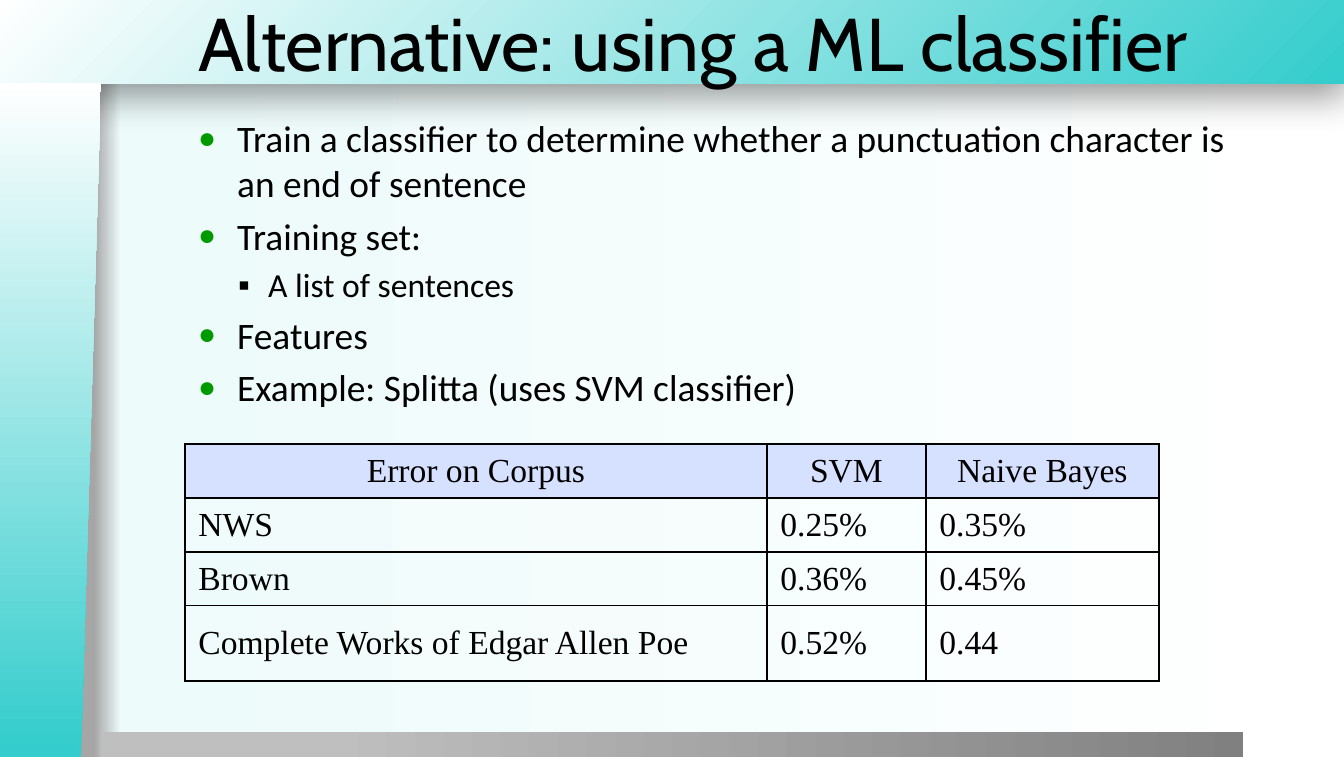
from lxml.etree import SubElement
from pptx import Presentation
from pptx.dml.color import RGBColor
from pptx.enum.shapes import MSO_SHAPE as Shape
from pptx.enum.text import MSO_ANCHOR as Anchor, MSO_AUTO_SIZE as AutoSize, PP_ALIGN as Align
from pptx.oxml.ns import qn
from pptx.util import Emu, Inches, Pt

SCALE = 914400 / 134.4
BLACK = RGBColor(0x00, 0x00, 0x00)
WHITE = RGBColor(0xFF, 0xFF, 0xFF)
TEAL = RGBColor(0x34, 0xCC, 0xCC)
MIST = RGBColor(0xED, 0xFB, 0xFB)
EDGE_GRAY = RGBColor(0xA6, 0xA6, 0xA6)
LIGHT_GRAY = RGBColor(0xBF, 0xBF, 0xBF)
DARK_GRAY = RGBColor(0x80, 0x80, 0x80)
GREEN = RGBColor(0x00, 0x99, 0x00)
HEADER_BLUE = RGBColor(0xD6, 0xE0, 0xFF)

POINTS = [
    ("Train a classifier to determine whether a punctuation character is an end of sentence", 0),
    ("Training set:", 0),
    ("A list of sentences", 1),
    ("Features", 0),
    ("Example: Splitta (uses SVM classifier)", 0),
]
ERROR_RATES = [
    ("Error on Corpus", "SVM", "Naive Bayes"),
    ("NWS", "0.25%", "0.35%"),
    ("Brown", "0.36%", "0.45%"),
    ("Complete Works of Edgar Allen Poe", "0.52%", "0.44"),
]
COLUMN_WIDTHS = (582, 159, 233)
ROW_HEIGHTS = (43, 43, 43, 75)


def px(length):
    """Turn pixels into EMU."""
    return Emu(round(length * SCALE))


def add_xml(parent, tag, **attributes):
    """Append a DrawingML child element."""
    return SubElement(parent, qn(tag), {key: str(value) for key, value in attributes.items()})


def set_gradient(fill, element, stops, from_corner=False):
    """Fill with colour stops, left to right or from the bottom right corner."""
    fill.gradient()
    gradient = element.find(".//" + qn("a:gradFill"))
    for child in list(gradient):
        gradient.remove(child)
    stop_list = add_xml(gradient, "a:gsLst")
    for position, color in stops:
        stop = add_xml(stop_list, "a:gs", pos=position * 1000)
        add_xml(stop, "a:srgbClr", val=color)
    if from_corner:
        corner = add_xml(gradient, "a:path", path="circle")
        add_xml(corner, "a:fillToRect", l=100000, t=100000)
    else:
        add_xml(gradient, "a:lin", ang=0, scaled=0)


def add_band(slide, preset, box, stops, from_corner=False):
    """Add a borderless gradient shape."""
    band = slide.shapes.add_shape(preset, *map(px, box))
    band.shadow.inherit = False
    band.line.fill.background()
    set_gradient(band.fill, band._element, stops, from_corner)
    return band


def add_shadow(shape):
    """Cast a soft shadow downwards."""
    effects = shape._element.spPr.find(qn("a:effectLst"))
    shadow = add_xml(effects, "a:outerShdw", blurRad=Pt(20), dist=Pt(6), dir=5400000,
                     algn="t", rotWithShape=0)
    color = add_xml(shadow, "a:srgbClr", val=BLACK)
    add_xml(color, "a:alpha", val=40000)


def write_text(paragraph, text, font="Calibri", size=20, color=BLACK, align=Align.LEFT, before=0):
    """Write one formatted run into a paragraph and end it in the same font."""
    paragraph.alignment = align
    paragraph.space_before = Pt(before)
    run = paragraph.add_run()
    run.text = text
    run.font.name = font
    run.font.size = Pt(size)
    run.font.color.rgb = color
    ending = add_xml(paragraph._p, "a:endParaRPr", sz=size * 100)
    add_xml(ending, "a:latin", typeface=font)


def set_bullet(paragraph, char, margin, hanging, color=BLACK, percent=100):
    """Give a paragraph a hanging bullet."""
    properties = paragraph._p.get_or_add_pPr()
    properties.set("marL", str(px(margin)))
    properties.set("indent", str(-px(hanging)))
    bullet_color = add_xml(properties, "a:buClr")
    add_xml(bullet_color, "a:srgbClr", val=color)
    add_xml(properties, "a:buSzPct", val=percent * 1000)
    add_xml(properties, "a:buFont", typeface="Arial")
    add_xml(properties, "a:buChar", char=char)


def add_backdrop(slide):
    """Paint the background and the three framing bands."""
    set_gradient(slide.background.fill, slide._element,
                 [(7, EDGE_GRAY), (9, MIST), (100, WHITE)])
    top = add_band(slide, Shape.RECTANGLE, (-1, 0, 1345, 84), [(0, TEAL), (100, WHITE)], True)
    add_shadow(top)
    add_band(slide, Shape.RECTANGLE, (101, 732, 1142, 26), [(20, LIGHT_GRAY), (100, DARK_GRAY)])
    side = add_band(slide, Shape.FLOWCHART_MANUAL_INPUT, (-287, 370, 675, 101),
                    [(1, TEAL), (100, WHITE)])
    side.rotation = 270
    side._element.spPr.xfrm.set("flipV", "1")


def set_title(slide, text):
    """Place the title in front of the top band."""
    title = slide.shapes.title
    slide.shapes._spTree.append(title._element)
    title.left, title.top, title.width, title.height = map(px, (185, 0, 1160, 84))
    frame = title.text_frame
    frame.auto_size = AutoSize.NONE
    frame.vertical_anchor = Anchor.MIDDLE
    write_text(frame.paragraphs[0], text, font="Cabin", size=40)


def add_points(slide):
    """Add the two-level bullet list."""
    frame = slide.shapes.add_textbox(*map(px, (185, 109, 1060, 327))).text_frame
    frame.word_wrap = True
    for index, (text, level) in enumerate(POINTS):
        paragraph = frame.add_paragraph() if index else frame.paragraphs[0]
        paragraph.level = level
        size = 18 if level else 20
        write_text(paragraph, text, size=size, before=size / 5)
        if level:
            set_bullet(paragraph, "▪", 70, 30)
        else:
            set_bullet(paragraph, "●", 39, 39, GREEN, 80)


def set_borders(cell):
    """Draw thin black lines on all sides of a cell."""
    properties = cell._tc.get_or_add_tcPr()
    for side in ("a:lnL", "a:lnR", "a:lnT", "a:lnB"):
        line = add_xml(properties, side, w=Pt(1))
        add_xml(add_xml(line, "a:solidFill"), "a:srgbClr", val=BLACK)


def fill_cell(cell, row):
    """Fill the header in blue and odd rows in translucent white."""
    if row == 2:
        cell.fill.background()
        return
    cell.fill.solid()
    cell.fill.fore_color.rgb = WHITE if row else HEADER_BLUE
    if row:
        color = cell._tc.tcPr.find(qn("a:solidFill")).find(qn("a:srgbClr"))
        add_xml(color, "a:alpha", val=20000)


def add_error_table(slide):
    """Add the table of error rates by corpus."""
    box = map(px, (185, 444, sum(COLUMN_WIDTHS), sum(ROW_HEIGHTS)))
    table = slide.shapes.add_table(len(ROW_HEIGHTS), len(COLUMN_WIDTHS), *box).table
    table.first_row = table.horz_banding = False
    for column, width in zip(table.columns, COLUMN_WIDTHS):
        column.width = px(width)
    for row, (height, values) in enumerate(zip(ROW_HEIGHTS, ERROR_RATES)):
        table.rows[row].height = px(height)
        for column, value in enumerate(values):
            cell = table.cell(row, column)
            cell.vertical_anchor = Anchor.MIDDLE
            set_borders(cell)
            fill_cell(cell, row)
            write_text(cell.text_frame.paragraphs[0], value, font="Times New Roman", size=18,
                       align=Align.LEFT if row else Align.CENTER)


def main():
    """Build and save the slide."""
    deck = Presentation()
    deck.slide_width, deck.slide_height = Inches(10), Inches(5.63)
    slide = deck.slides.add_slide(deck.slide_layouts[5])
    add_backdrop(slide)
    set_title(slide, "Alternative: using a ML classifier")
    add_points(slide)
    add_error_table(slide)
    deck.save("out.pptx")


if __name__ == "__main__":
    main()
